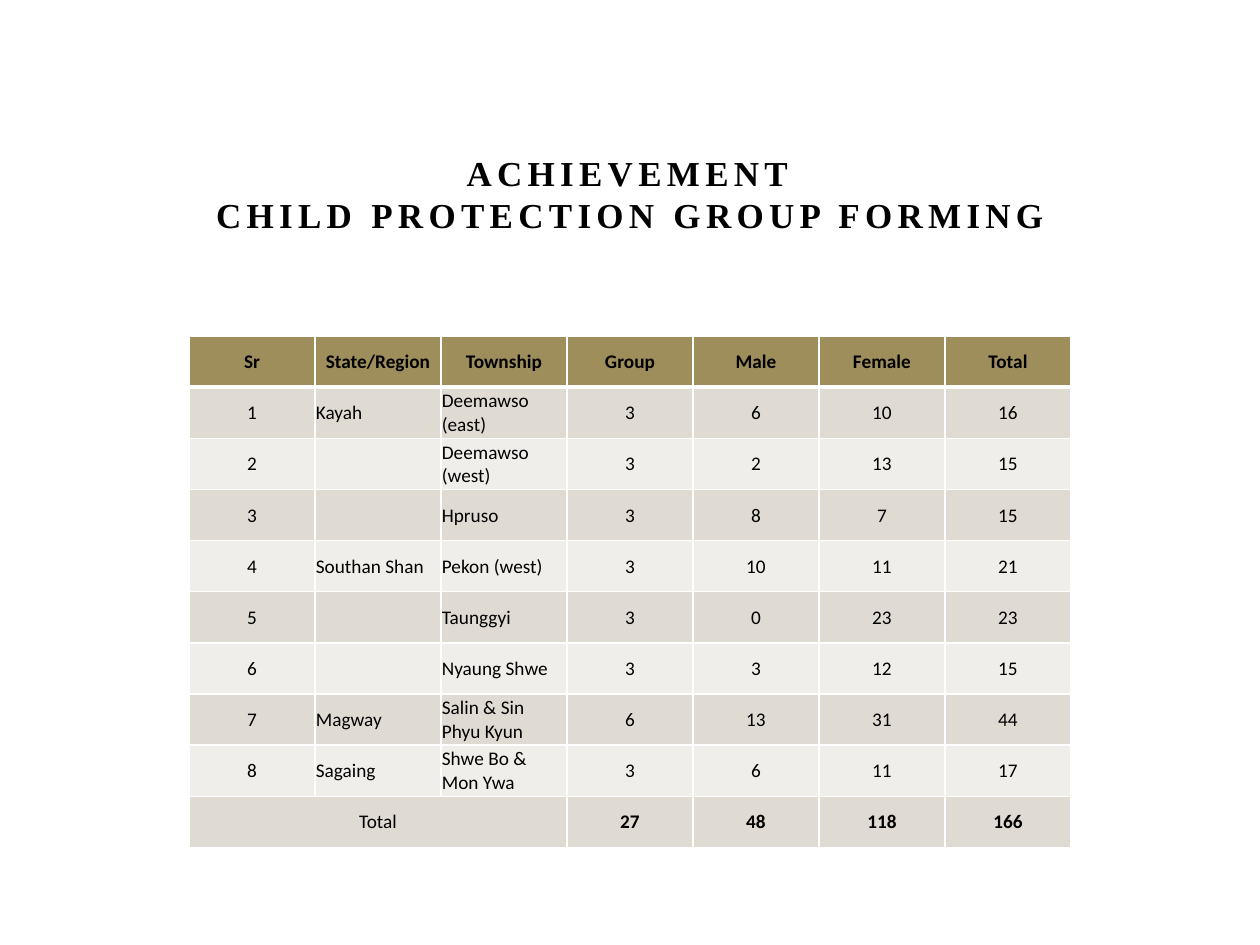
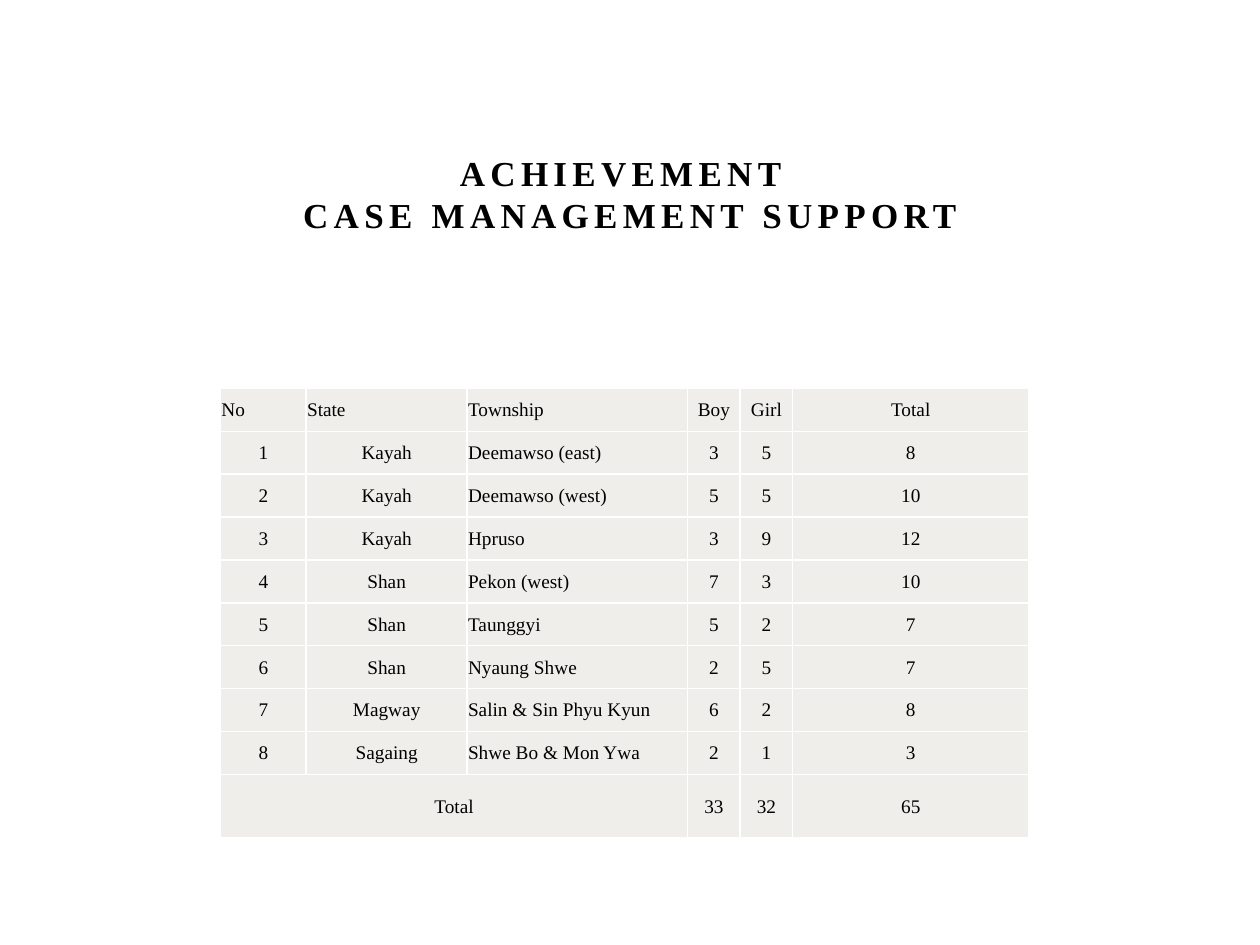
from lxml.etree import SubElement
from pptx import Presentation
from pptx.dml.color import RGBColor
from pptx.enum.text import MSO_ANCHOR, PP_ALIGN
from pptx.oxml.ns import qn
from pptx.util import Pt

BLACK = RGBColor(0x00, 0x00, 0x00)
WHITE = RGBColor(0xFF, 0xFF, 0xFF)
OLIVE = RGBColor(0x9E, 0x8E, 0x5C)
SAND = RGBColor(0xDF, 0xDB, 0xD2)
PALE = RGBColor(0xF0, 0xEE, 0xEA)

SERIF = "Times New Roman"
TITLE = {"name": SERIF, "size": Pt(20), "bold": True}
CELL = {
    "margin_left": Pt(0.5),
    "margin_right": Pt(0.5),
    "margin_top": Pt(0.5),
    "margin_bottom": Pt(0),
    "vertical_anchor": MSO_ANCHOR.MIDDLE,
}
PLAIN = {"first_row": False, "horz_banding": False}

TOWNS = [
    "Deemawso (east)",
    "Deemawso (west)",
    "Hpruso",
    "Pekon (west)",
    "Taunggyi",
    "Nyaung Shwe",
    "Salin & Sin Phyu Kyun",
    "Shwe Bo & Mon Ywa",
]

PAGES = [
    {
        "title": "ACHIEVEMENT\vCHILD PROTECTION GROUP FORMING",
        "spot": (108, 192),
        "cols": [72] * 7,
        "rows": [29.25] * 10,
        "font": "Calibri",
        "head": ["Sr", "State/Region", "Township", "Group", "Male", "Female", "Total"],
        "states": ["Kayah", "", "", "Southan Shan", "", "", "Magway", "Sagaing"],
        "counts": [
            (3, 6, 10, 16),
            (3, 2, 13, 15),
            (3, 8, 7, 15),
            (3, 10, 11, 21),
            (3, 0, 23, 23),
            (3, 3, 12, 15),
            (6, 13, 31, 44),
            (3, 6, 11, 17),
        ],
        "total": (27, 48, 118, 166),
        "fills": [OLIVE] + [SAND, PALE] * 4 + [SAND],
        "left_head": (),
        "left_body": (1, 2),
        "bold": True,
        "rule": 3,
    },
    {
        "title": "ACHIEVEMENT \vCASE MANAGEMENT SUPPORT",
        "spot": (126, 222),
        "cols": [49, 92, 126, 30, 30, 135],
        "rows": [24.5] * 9 + [36.5],
        "font": SERIF,
        "head": ["No", "State", "Township", "Boy", "Girl", "Total"],
        "states": ["Kayah"] * 3 + ["Shan"] * 3 + ["Magway", "Sagaing"],
        "counts": [
            (3, 5, 8),
            (5, 5, 10),
            (3, 9, 12),
            (7, 3, 10),
            (5, 2, 7),
            (2, 5, 7),
            (6, 2, 8),
            (2, 1, 3),
        ],
        "total": (33, 32, 65),
        "fills": [PALE] * 10,
        "left_head": (0, 1, 2),
        "left_body": (2,),
        "bold": False,
        "rule": 1,
    },
]


def apply(thing, form):
    for key, value in form.items():
        setattr(thing, key, value)


def border(cell, sides):
    props = cell._tc.get_or_add_tcPr()
    for side, width in sides.items():
        line = SubElement(props, qn("a:ln" + side), w=str(Pt(width)))
        fill = SubElement(line, qn("a:solidFill"))
        SubElement(fill, qn("a:srgbClr"), val=str(WHITE))


deck = Presentation()
deck.slide_width = Pt(720)
deck.slide_height = Pt(540)

for page in PAGES:
    slide = deck.slides.add_slide(deck.slide_layouts[6])
    frame = slide.shapes.add_textbox(Pt(108), Pt(84), Pt(504), Pt(54)).text_frame
    apply(frame, {"word_wrap": True, "vertical_anchor": MSO_ANCHOR.BOTTOM})
    para = frame.paragraphs[0]
    para.text = page["title"]
    apply(para, {"alignment": PP_ALIGN.CENTER, "line_spacing": Pt(24)})
    for run in para.runs:
        apply(run.font, TITLE)
        run.font.color.rgb = BLACK
        run.font._element.set("spc", "300")

    body = [
        (num, state, town, *count)
        for num, (state, town, count) in enumerate(
            zip(page["states"], TOWNS, page["counts"]), 1
        )
    ]
    grid = [page["head"], *body, ("Total", "", "", *page["total"])]
    last = len(grid) - 1
    cols, rows = page["cols"], page["rows"]
    left, top = page["spot"]
    table = slide.shapes.add_table(
        len(rows), len(cols), Pt(left), Pt(top), Pt(sum(cols)), Pt(sum(rows))
    ).table
    apply(table, PLAIN)
    for col, width in zip(table.columns, cols):
        col.width = Pt(width)
    for row, height in zip(table.rows, rows):
        row.height = Pt(height)
    table.cell(last, 0).merge(table.cell(last, 2))

    for r, line in enumerate(grid):
        flush = page["left_head"] if r == 0 else page["left_body"]
        for c, value in enumerate(line):
            cell = table.cell(r, c)
            apply(cell, CELL)
            over = page["rule"] if r == 1 else 1
            under = page["rule"] if r == 0 else 1
            border(cell, {"L": 1, "R": 1, "T": over, "B": under})
            cell.fill.solid()
            cell.fill.fore_color.rgb = page["fills"][r]
            if value == "":
                continue
            para = cell.text_frame.paragraphs[0]
            para.alignment = PP_ALIGN.LEFT if c in flush else PP_ALIGN.CENTER
            run = para.add_run()
            run.text = str(value)
            heavy = page["bold"] and (r == 0 or (r == last and c > 2))
            apply(run.font, {"name": page["font"], "size": Pt(11), "bold": heavy})
            run.font.color.rgb = BLACK

deck.save("out.pptx")
